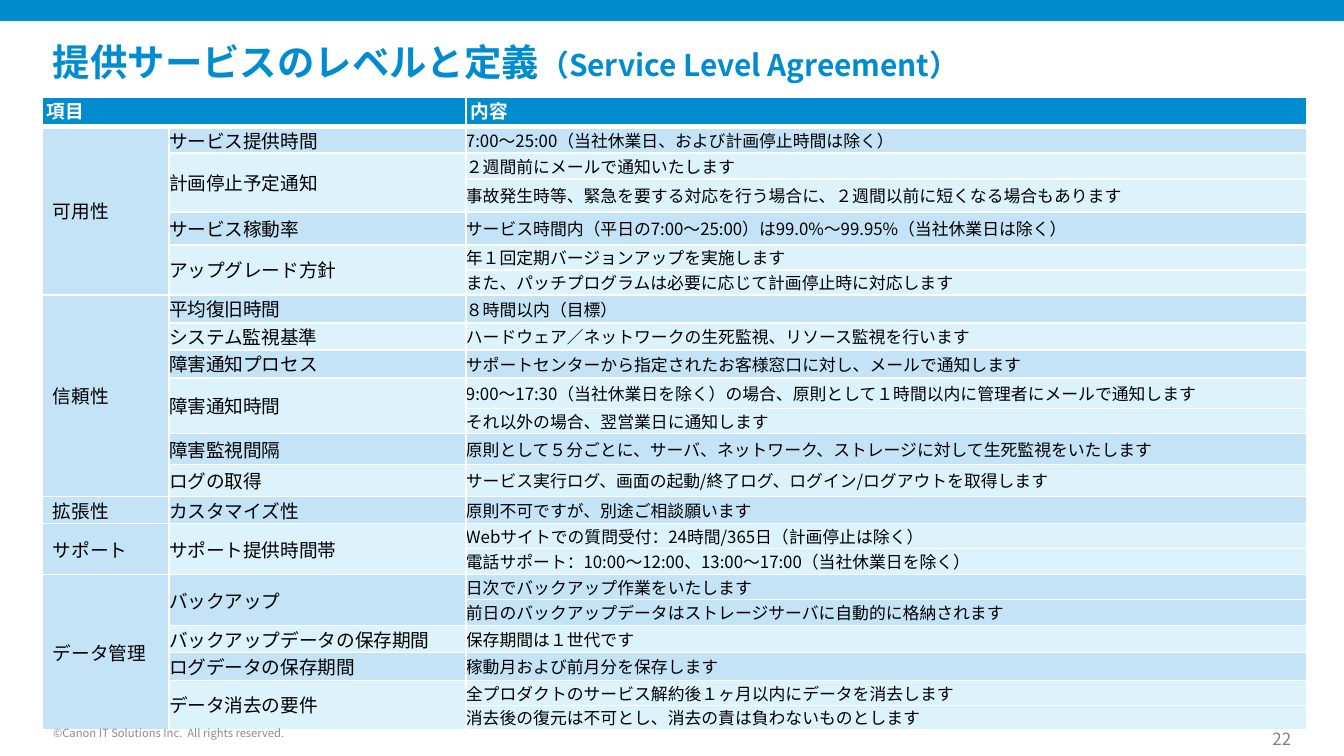
from pptx import Presentation
from pptx.dml.color import RGBColor
from pptx.enum.shapes import MSO_SHAPE
from pptx.enum.text import MSO_ANCHOR as Anchor, PP_ALIGN as Align
from pptx.oxml import parse_xml
from pptx.oxml.ns import nsdecls
from pptx.util import Emu, Pt

TITLE = "提供サービスのレベルと定義"
SUBTITLE = "（Service Level Agreement）"
HEADERS = ("項目", "内容")
PAGE_NUMBER = "22"
COPYRIGHT = "©Canon IT Solutions Inc.  All rights reserved."

# category, [(item, [(content, row height in px), ...]), ...]
LEVELS = [
    ("可用性", [
        ("サービス提供時間", [("7:00～25:00（当社休業日、および計画停止時間は除く）", 26)]),
        ("計画停止予定通知", [
            ("２週間前にメールで通知いたします", 26),
            ("事故発生時等、緊急を要する対応を行う場合に、２週間以前に短くなる場合もあります", 33)]),
        ("サービス稼動率", [
            ("サービス時間内（平日の7:00～25:00）は99.0%～99.95%（当社休業日は除く）", 33)]),
        ("アップグレード方針", [
            ("年１回定期バージョンアップを実施します", 25),
            ("また、パッチプログラムは必要に応じて計画停止時に対応します", 25)]),
    ]),
    ("信頼性", [
        ("平均復旧時間", [("８時間以内（目標）", 28)]),
        ("システム監視基準", [("ハードウェア／ネットワークの生死監視、リソース監視を行います", 27)]),
        ("障害通知プロセス", [
            ("サポートセンターから指定されたお客様窓口に対し、メールで通知します", 28)]),
        ("障害通知時間", [
            ("9:00～17:30（当社休業日を除く）の場合、原則として１時間以内に管理者にメールで通知します", 31),
            ("それ以外の場合、翌営業日に通知します", 25)]),
        ("障害監視間隔", [
            ("原則として５分ごとに、サーバ、ネットワーク、ストレージに対して生死監視をいたします", 31)]),
        ("ログの取得", [
            ("サービス実行ログ、画面の起動/終了ログ、ログイン/ログアウトを取得します", 32)]),
    ]),
    ("拡張性", [("カスタマイズ性", [("原則不可ですが、別途ご相談願います", 27)])]),
    ("サポート", [
        ("サポート提供時間帯", [
            ("Webサイトでの質問受付：24時間/365日（計画停止は除く）", 25),
            ("電話サポート：10:00～12:00、13:00～17:00（当社休業日を除く）", 26)]),
    ]),
    ("データ管理", [
        ("バックアップ", [
            ("日次でバックアップ作業をいたします", 25),
            ("前日のバックアップデータはストレージサーバに自動的に格納されます", 26)]),
        ("バックアップデータの保存期間", [("保存期間は１世代です", 27)]),
        ("ログデータの保存期間", [("稼動月および前月分を保存します", 28)]),
        ("データ消去の要件", [
            ("全プロダクトのサービス解約後１ヶ月以内にデータを消去します", 25),
            ("消去後の復元は不可とし、消去の責は負わないものとします", 24)]),
    ]),
]

THEME = {
    "font": "Noto Sans CJK JP",
    "brand": "008CCF", "white": "FFFFFF", "black": "000000",
    "bands": ("C5E3F7", "DDF3FC"),
    "page": "808080", "copyright": "8C8C8C",
    "title": 20, "subtitle": 16, "label": 10, "content": 9, "small": 6,
}
SLIDE_SIZE = (1344, 756)
COLUMNS = (127, 297, 841)
HEADER_HEIGHT = 30
TABLE_LEFT, TABLE_TOP = 42, 97


def px(length):
    return Emu(round(length * 914400 / 134.4))


def add_run(paragraph, text, size, color, bold=False):
    run = paragraph.add_run()
    run.text = text
    style = {"name": THEME["font"], "size": Pt(size), "bold": bold}
    for name, value in style.items():
        setattr(run.font, name, value)
    run.font.color.rgb = RGBColor.from_string(color)
    run.font._element.append(parse_xml(
        f'<a:ea {nsdecls("a")} typeface="{THEME["font"]}"/>'))


def set_margins(holder, left=0):
    for side in ("left", "top", "right", "bottom"):
        setattr(holder, f"margin_{side}", px(left if side == "left" else 0))


def add_text(slide, box, anchor=Anchor.BOTTOM, align=Align.LEFT):
    """Add an empty text box and return its first paragraph."""
    frame = slide.shapes.add_textbox(*map(px, box)).text_frame
    set_margins(frame)
    frame.word_wrap = True
    frame.vertical_anchor = anchor
    paragraph = frame.paragraphs[0]
    paragraph.alignment = align
    return paragraph


def paint_cell(cell, fill, bottom=1, top=1):
    """Set the fill and the white borders, whose widths are in points."""
    cell.fill.solid()
    cell.fill.fore_color.rgb = RGBColor.from_string(fill)
    properties = cell._tc.get_or_add_tcPr()
    for index, (side, width) in enumerate(zip("LRTB", (1, 1, top, bottom))):
        properties.insert(index, parse_xml(
            f'<a:ln{side} {nsdecls("a")} w="{Pt(width)}"><a:solidFill>'
            f'<a:srgbClr val="{THEME["white"]}"/></a:solidFill></a:ln{side}>'))


def write_cell(cell, text, size, color=THEME["black"], left=0, bold=False,
               anchor=Anchor.MIDDLE):
    set_margins(cell, left)
    cell.vertical_anchor = anchor
    add_run(cell.text_frame.paragraphs[0], text, size, color, bold)


def merge_down(table, first, last, column):
    if last > first:
        table.cell(first, column).merge(table.cell(last, column))


def add_level_table(slide):
    heights = [HEADER_HEIGHT] + [height for _, items in LEVELS
                                 for _, lines in items for _, height in lines]
    table = slide.shapes.add_table(
        len(heights), len(COLUMNS), px(TABLE_LEFT), px(TABLE_TOP),
        px(sum(COLUMNS)), px(sum(heights))).table
    table.first_row = table.horz_banding = False
    for column, width in zip(table.columns, COLUMNS):
        column.width = px(width)
    for row, height in zip(table.rows, heights):
        row.height = px(height)

    for column in range(len(COLUMNS)):
        paint_cell(table.cell(0, column), THEME["brand"], bottom=3)
    table.cell(0, 0).merge(table.cell(0, 1))
    for column, text in zip((0, 2), HEADERS):
        write_cell(table.cell(0, column), text, THEME["label"], THEME["white"],
                   left=5, bold=True, anchor=Anchor.TOP)

    row = item_count = 0
    for category, items in LEVELS:
        category_row = row + 1
        for item, lines in items:
            item_row = row + 1
            band = THEME["bands"][item_count % 2]
            item_count += 1
            for text, _ in lines:
                row += 1
                for column, fill in enumerate((THEME["bands"][0], band, band)):
                    paint_cell(table.cell(row, column), fill, top=3 if row == 1 else 1)
                write_cell(table.cell(row, 2), text, THEME["content"])
            merge_down(table, item_row, row, 1)
            write_cell(table.cell(item_row, 1), item, THEME["label"])
        merge_down(table, category_row, row, 0)
        write_cell(table.cell(category_row, 0), category, THEME["label"], left=11)


def main():
    presentation = Presentation()
    presentation.slide_width, presentation.slide_height = map(px, SLIDE_SIZE)
    slide = presentation.slides.add_slide(presentation.slide_layouts[6])

    top_bar = slide.shapes.add_shape(
        MSO_SHAPE.RECTANGLE, 0, 0, px(SLIDE_SIZE[0]), px(21))
    top_bar.shadow.inherit = False
    top_bar.fill.solid()
    top_bar.fill.fore_color.rgb = RGBColor.from_string(THEME["brand"])
    top_bar.line.fill.background()

    title = add_text(slide, (53, 39, 1153, 86), Anchor.TOP)
    for text, size in ((TITLE, "title"), (SUBTITLE, "subtitle")):
        add_run(title, text, THEME[size], THEME["brand"], bold=True)

    add_level_table(slide)

    page_number = add_text(slide, (1239, 729, 52, 20), align=Align.RIGHT)
    add_run(page_number, PAGE_NUMBER, THEME["content"], THEME["page"])
    copyright_line = add_text(slide, (53, 720, 317, 20))
    add_run(copyright_line, COPYRIGHT, THEME["small"], THEME["copyright"])

    presentation.save("out.pptx")


if __name__ == "__main__":
    main()
